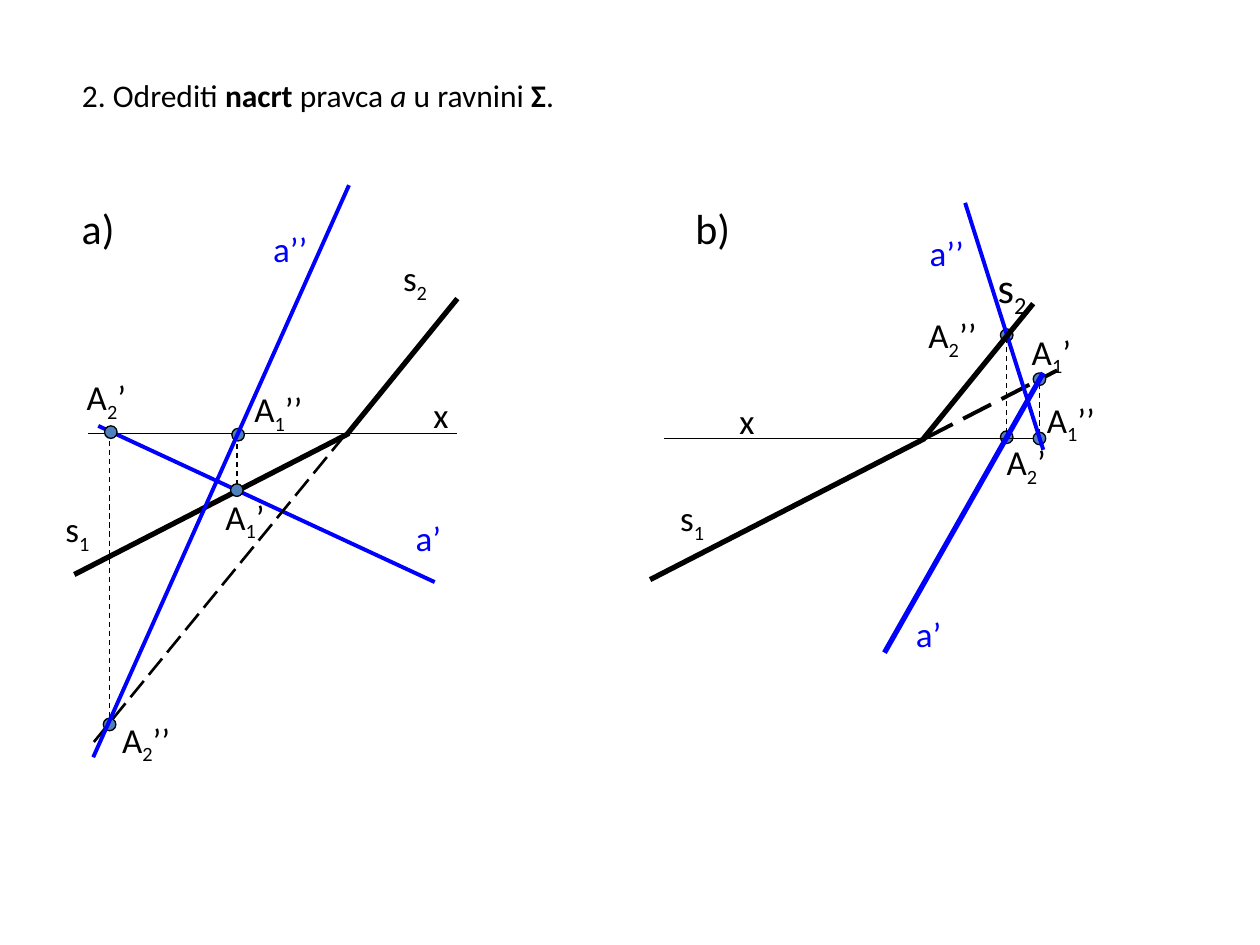
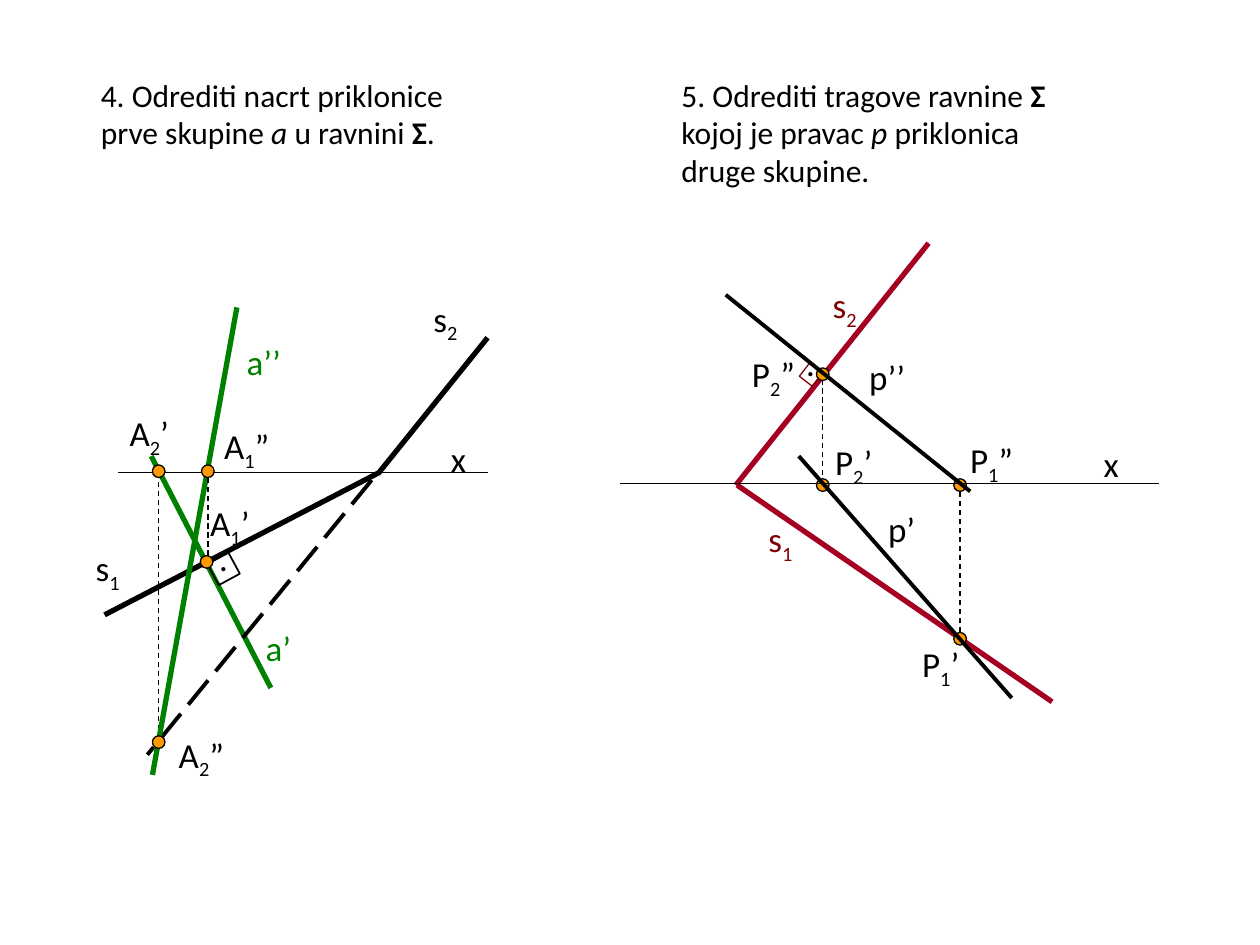
from lxml.etree import SubElement
from pptx import Presentation
from pptx.dml.color import RGBColor
from pptx.enum.dml import MSO_LINE
from pptx.enum.shapes import MSO_CONNECTOR, MSO_SHAPE
from pptx.enum.text import MSO_ANCHOR, MSO_AUTO_SIZE, PP_ALIGN
from pptx.oxml.ns import qn
from pptx.util import Cm, Pt

HUE = {"ink": "000000", "blue": "0000FF", "green": "008000", "red": "A50021",
       "wine": "800000", "steel": "4F81BD", "gold": "FF9900"}
FONT = "Calibri"
GRID = 2.54  # centimetres in one unit of the drawings
DOT = 0.1
ROW = 0.44  # height of a label
LEFT, RIGHT = (0, 1), (5, 1)  # corners of the two drawing areas


def size(units):
    return Cm(GRID * units)


def tint(name):
    return RGBColor.from_string(HUE[name])


def style(run, points, colour="ink"):
    run.font.name = FONT
    run.font.size = Pt(points)
    run.font.color.rgb = tint(colour)


def write_task(shape, box, parts):
    """Fill a shape with (text, style) parts, where style is "", "b" or "i"."""
    shape.left, shape.top, shape.width, shape.height = map(size, box)
    frame = shape.text_frame
    frame.word_wrap = True
    frame.auto_size = MSO_AUTO_SIZE.NONE
    frame.vertical_anchor = MSO_ANCHOR.TOP
    para = frame.paragraphs[0]
    para.alignment = PP_ALIGN.LEFT
    for text, kind in parts:
        run = para.add_run()
        run.text = text
        style(run, 18)
        run.font.bold = kind == "b"
        run.font.italic = kind == "i"


class Board:
    """A drawing area whose parts are placed from its top left corner."""

    def __init__(self, slide, corner, fill):
        self.shapes = slide.shapes
        self.left, self.top = corner
        self.fill = fill

    def place(self, x, y):
        return size(self.left + x), size(self.top + y)

    def line(self, start, end, colour="ink", weight=3, dash=None):
        link = self.shapes.add_connector(
            MSO_CONNECTOR.STRAIGHT, *self.place(*start), *self.place(*end))
        link.line.color.rgb = tint(colour)
        link.line.width = Pt(weight)
        if dash:
            link.line.dash_style = dash
        SubElement(link._element.spPr, qn("a:effectLst"))

    def axis(self, x1, x2, y):
        self.line((x1, y), (x2, y), weight=0.75)

    def drop(self, x, y1, y2):
        self.line((x, y1), (x, y2), weight=0.75, dash=MSO_LINE.DASH)

    def hidden(self, start, end, weight=2.25):
        self.line(start, end, weight=weight, dash=MSO_LINE.LONG_DASH)

    def outline(self, kind, x, y, side, colour, weight):
        shape = self.shapes.add_shape(
            kind, *self.place(x, y), size(side), size(side))
        shape.shadow.inherit = False
        shape.line.color.rgb = tint(colour)
        shape.line.width = Pt(weight)
        return shape

    def dots(self, *spots):
        for x, y in spots:
            dot = self.outline(MSO_SHAPE.OVAL, x, y, DOT, "ink", 0.75)
            dot.fill.solid()
            dot.fill.fore_color.rgb = tint(self.fill)

    def square(self, x, y, side, turn, colour, weight):
        mark = self.outline(MSO_SHAPE.RECTANGLE, x, y, side, colour, weight)
        mark.fill.background()
        mark.rotation = turn

    def label(self, text, x, y, width, colour="ink", points=20):
        """Write a label; the sign after "_" is set as a subscript."""
        box = self.shapes.add_textbox(
            *self.place(x, y), size(width), size(ROW))
        box.text_frame.word_wrap = True
        para = box.text_frame.paragraphs[0]
        base, _, tail = text.partition("_")
        for index, part in enumerate((base, tail[:1], tail[1:])):
            if part:
                run = para.add_run()
                run.text = part
                style(run, points, colour)
                if index == 1:
                    run._r.get_or_add_rPr().set("baseline", "-25000")

    def labels(self, *items):
        for item in items:
            self.label(*item)


def draw_a(slide):
    board = Board(slide, LEFT, "steel")
    board.axis(0.7, 3.63, 2.44)
    board.line((3.63, 1.37), (2.76, 2.44))
    board.line((2.77, 2.44), (0.59, 3.56))
    board.line((0.78, 2.38), (3.45, 3.62), "blue", 2.25)
    board.drop(1.88, 2.85, 2.41)
    board.drop(0.87, 2.43, 4.76)
    board.hidden((2.74, 2.45), (0.72, 4.92), 1.5)
    board.dots((1.83, 2.84), (1.84, 2.4), (0.83, 2.38), (0.82, 4.7))
    board.line((0.74, 5.01), (2.77, 0.47), "blue", 2.25)
    board.labels(
        ("a)", 0.55, 0.56, 0.61, "ink", 24),
        ("s_1", 0.42, 2.98, 0.65), ("s_2", 3.1, 0.99, 0.51),
        ("a’", 3.2, 3.05, 0.6, "blue"), ("a’’", 2.07, 0.76, 0.9, "blue"),
        ("A_1’", 1.69, 2.88, 0.66), ("A_1’’", 1.92, 2.03, 0.84),
        ("A_2’", 0.59, 1.93, 0.67), ("A_2’’", 0.87, 4.65, 0.72),
        ("x", 3.34, 2.07, 0.31))


def draw_b(slide):
    board = Board(slide, RIGHT, "steel")
    board.dots((2.94, 2.42), (2.94, 1.61))
    board.drop(2.99, 2.44, 1.69)
    board.hidden((2.34, 2.48), (3.39, 1.94))
    board.dots((3.2, 1.96), (3.2, 2.43))
    board.drop(3.25, 2.05, 2.48)
    board.line((2.66, 0.61), (3.28, 2.57), "blue", 2.25)
    board.line((3.2, 1.41), (2.33, 2.48))
    board.axis(0.27, 3.2, 2.48)
    board.line((3.28, 1.96), (2.02, 4.18), "blue")
    board.line((2.34, 2.48), (0.16, 3.6))
    board.labels(
        ("b)", 0.42, 0.56, 0.57, "ink", 24),
        ("s_1", 0.3, 2.89, 0.65), ("s_2", 2.82, 1.03, 0.7, "ink", 24),
        ("a’", 2.17, 3.81, 0.61, "blue"), ("a’’", 2.28, 0.79, 0.7, "blue"),
        ("A_1’", 3.09, 1.57, 0.6), ("A_1’’", 3.21, 2.11, 0.72),
        ("A_2’", 2.89, 2.45, 0.75), ("A_2’’", 2.27, 1.44, 0.81),
        ("x", 0.77, 2.12, 0.4))


def draw_first(slide):
    """Line of steepest slope of the first group."""
    board = Board(slide, LEFT, "gold")
    board.axis(0.94, 3.87, 2.75)
    board.line((3.87, 1.68), (3, 2.76))
    board.line((3.01, 2.75), (0.83, 3.88))
    board.line((1.2, 2.62), (2.15, 4.46), "green")
    board.drop(1.26, 2.75, 4.93)
    board.hidden((2.95, 2.81), (1.17, 4.99))
    board.line((1.21, 5.15), (1.88, 1.44), "green")
    board.square(1.68, 3.42, 0.19, 331.5, "ink", 1)
    board.drop(1.65, 3.41, 2.75)
    board.dots((1.21, 4.84), (1.59, 3.41), (1.21, 2.69), (1.6, 2.69))
    board.labels(
        ("s_1", 0.66, 3.29, 0.65), ("s_2", 3.34, 1.31, 0.51),
        ("a’", 2.01, 3.92, 0.72, "green"),
        ("a’’", 1.86, 1.65, 0.66, "green"),
        (".", 1.64, 3.21, 0.26),
        ("A_1’", 1.57, 2.93, 0.6), ("A_1”", 1.68, 2.32, 0.58),
        ("A_2’", 0.93, 2.22, 0.64), ("A_2”", 1.32, 4.77, 0.68),
        ("x", 3.48, 2.42, 0.36))


def draw_second(slide):
    """Plane traces from a line of steepest slope of the second group."""
    board = Board(slide, RIGHT, "gold")
    board.line((0.85, 2.85), (3.35, 4.57), "red")
    board.line((0.84, 2.85), (2.37, 0.93), "red")
    board.square(1.37, 1.91, 0.13, 37.9, "wine", 0.75)
    board.drop(1.53, 2.84, 1.96)
    board.drop(2.62, 4.09, 2.85)
    board.dots((1.48, 2.8), (2.57, 4.02), (1.48, 1.92), (2.57, 2.8))
    board.line((1.34, 2.62), (3.03, 4.54), weight=2.25)
    board.axis(-0.08, 4.2, 2.84)
    board.line((0.76, 1.34), (2.7, 2.9), weight=2.25)
    board.labels(
        ("s_1", 1, 3.06, 0.56, "wine"), ("s_2", 1.51, 1.2, 0.5, "wine"),
        (".", 1.3, 1.66, 0.29),
        ("P_1’", 2.22, 4.05, 0.53), ("P_1”", 2.6, 2.43, 0.58),
        ("P_2’", 1.53, 2.45, 0.53), ("P_2”", 0.87, 1.75, 0.56),
        ("p’", 1.95, 2.98, 1.17), ("p’’", 1.8, 1.77, 0.58),
        ("x", 3.66, 2.46, 0.38))


def add_slide(deck, box, parts):
    slide = deck.slides.add_slide(deck.slide_layouts[5])
    write_task(slide.shapes.title, box, parts)
    return slide


def main():
    deck = Presentation()
    deck.slide_width, deck.slide_height = Cm(25.4), Cm(19.05)

    plan = add_slide(deck, (0.55, 0.55, 4.12, 0.4), [
        ("2. Odrediti ", ""), ("nacrt", "b"), (" pravca ", ""), ("a", "i"),
        (" u ravnini ", ""), ("Σ", "b"), (".", "")])
    draw_a(plan)
    draw_b(plan)

    slope = add_slide(deck, (0.7, 0.55, 3.36, 0.71), [
        ("4. Odrediti nacrt priklonice prve skupine ", ""), ("a", "i"),
        (" u ravnini ", ""), ("Σ", "b"), (".", "")])
    draw_first(slope)
    write_task(slope.shapes.add_textbox(0, 0, 0, 0), (5.31, 0.55, 3.29, 1.01), [
        ("5. Odrediti tragove ravnine ", ""), ("Σ", "b"),
        (" kojoj je pravac ", ""), ("p ", "i"),
        ("priklonica druge skupine.", "")])
    draw_second(slope)

    deck.save("out.pptx")


if __name__ == "__main__":
    main()
